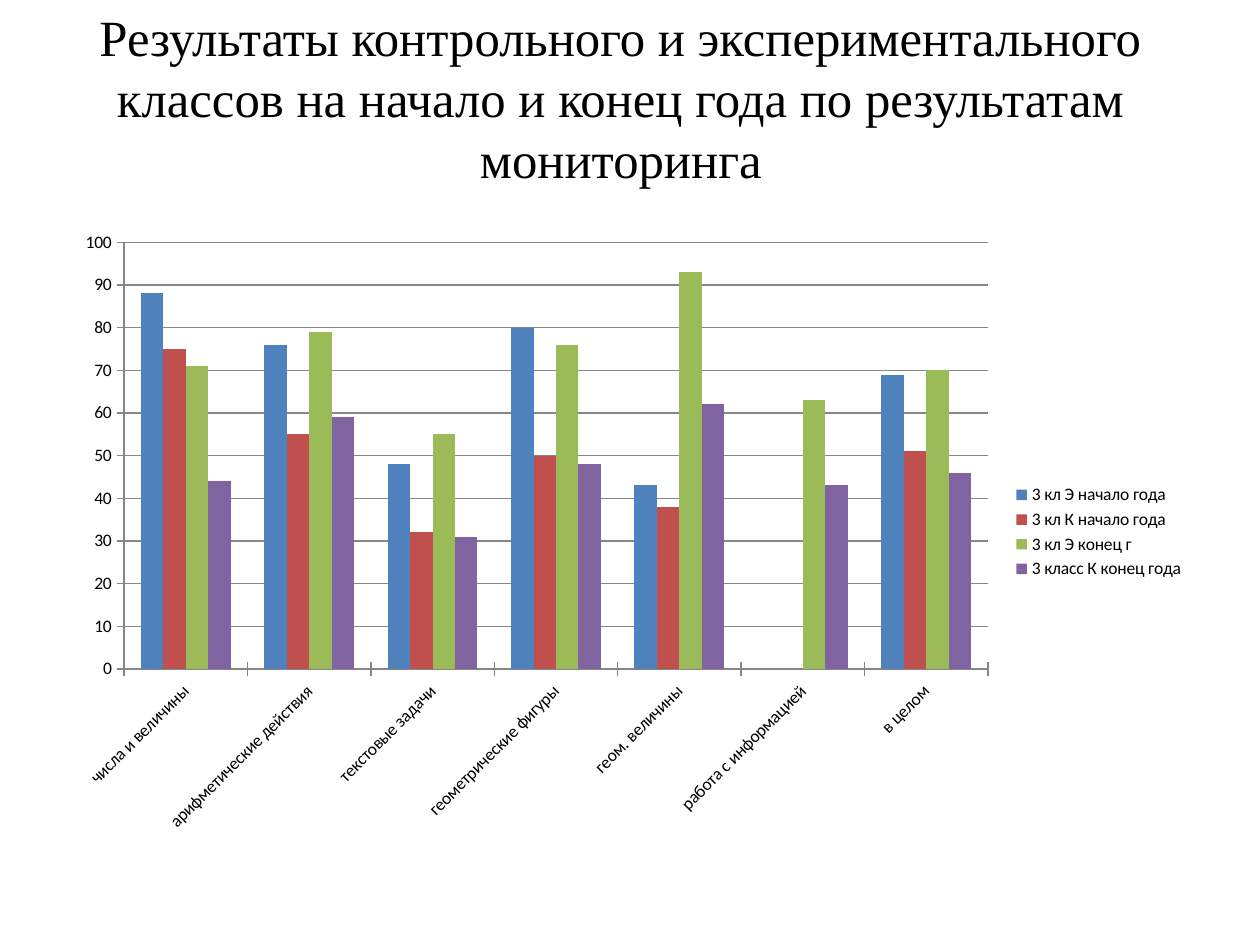
from pptx import Presentation
from pptx.chart.data import CategoryChartData
from pptx.dml.color import RGBColor
from pptx.enum.chart import XL_CHART_TYPE, XL_LEGEND_POSITION, XL_TICK_MARK
from pptx.enum.text import MSO_ANCHOR, MSO_AUTO_SIZE, PP_ALIGN
from pptx.util import Emu, Pt

BLACK = RGBColor(0x00, 0x00, 0x00)
GRAY = RGBColor(0x86, 0x86, 0x86)
BLUE = RGBColor(0x4F, 0x81, 0xBD)
RED = RGBColor(0xC0, 0x50, 0x4D)
GREEN = RGBColor(0x9B, 0xBB, 0x59)
PURPLE = RGBColor(0x80, 0x64, 0xA2)

TITLE = (
    "Результаты контрольного и экспериментального "
    "классов на начало и конец года по результатам мониторинга"
)
CATEGORIES = [
    "числа и величины",
    "арифметические действия",
    "текстовые задачи",
    "геометрические фигуры",
    "геом. величины",
    "работа с информацией",
    "в целом",
]
SERIES = [
    ("3 кл Э начало года", [88, 76, 48, 80, 43, None, 69], BLUE),
    ("3 кл К начало года", [75, 55, 32, 50, 38, None, 51], RED),
    ("3 кл Э конец г", [71, 79, 55, 76, 93, 63, 70], GREEN),
    ("3 класс К конец года", [44, 59, 31, 48, 62, 43, 46], PURPLE),
]


def px(length):
    """Convert pixels at 126 to the inch into EMU."""
    return Emu(round(length * 914400 / 126))


def place_title(page, box):
    """Fill the title placeholder, with its text raised inside the box."""
    title = page.shapes.title
    title.left, title.top, title.width, title.height = map(px, box)
    frame = title.text_frame
    frame.text = TITLE
    frame.word_wrap = True
    frame.auto_size = MSO_AUTO_SIZE.NONE
    frame.vertical_anchor = MSO_ANCHOR.MIDDLE
    frame.margin_top = px(6)
    frame.margin_bottom = px(80)
    para = frame.paragraphs[0]
    para.alignment = PP_ALIGN.CENTER
    font = para.runs[0].font
    font.name = "Times New Roman"
    font.size = Pt(29)
    font.color.rgb = BLACK


def style_axis(axis):
    """Give an axis its tick marks and gray line."""
    axis.major_tick_mark = XL_TICK_MARK.CROSS
    axis.format.line.color.rgb = GRAY
    axis.format.line.width = Pt(0.75)


def place_results_chart(page, box):
    """Add the clustered columns comparing the classes."""
    data = CategoryChartData()
    data.categories = CATEGORIES
    for name, values, _ in SERIES:
        data.add_series(name, values)
    chart = page.shapes.add_chart(
        XL_CHART_TYPE.COLUMN_CLUSTERED, *map(px, box), data
    ).chart
    chart.has_title = False
    chart.font.name = "Calibri"
    chart.font.size = Pt(10)
    chart.font.color.rgb = BLACK
    chart.has_legend = True
    chart.legend.position = XL_LEGEND_POSITION.RIGHT
    chart.legend.include_in_layout = False

    plot = chart.plots[0]
    plot.vary_by_categories = False
    plot.gap_width = 150
    plot.overlap = 0
    for series, (_, _, color) in zip(plot.series, SERIES):
        series.format.fill.solid()
        series.format.fill.fore_color.rgb = color

    style_axis(chart.category_axis)
    style_axis(chart.value_axis)
    chart.value_axis.minimum_scale = 0
    chart.value_axis.maximum_scale = 100
    chart.value_axis.major_unit = 10
    chart.value_axis.has_major_gridlines = True
    gridline = chart.value_axis.major_gridlines.format.line
    gridline.color.rgb = GRAY
    gridline.width = Pt(0.75)
    chart.category_axis.tick_labels.font.size = Pt(10)
    chart.category_axis._element.txPr.bodyPr.set("rot", "-2700000")


def main():
    """Build the slide and save the deck."""
    deck = Presentation()
    deck.slide_width, deck.slide_height = px(1260), px(945)
    page = deck.slides.add_slide(deck.slide_layouts[5])
    place_title(page, (54, 55, 1134, 158))
    place_results_chart(page, (63, 220, 1134, 624))
    deck.save("out.pptx")


if __name__ == "__main__":
    main()
